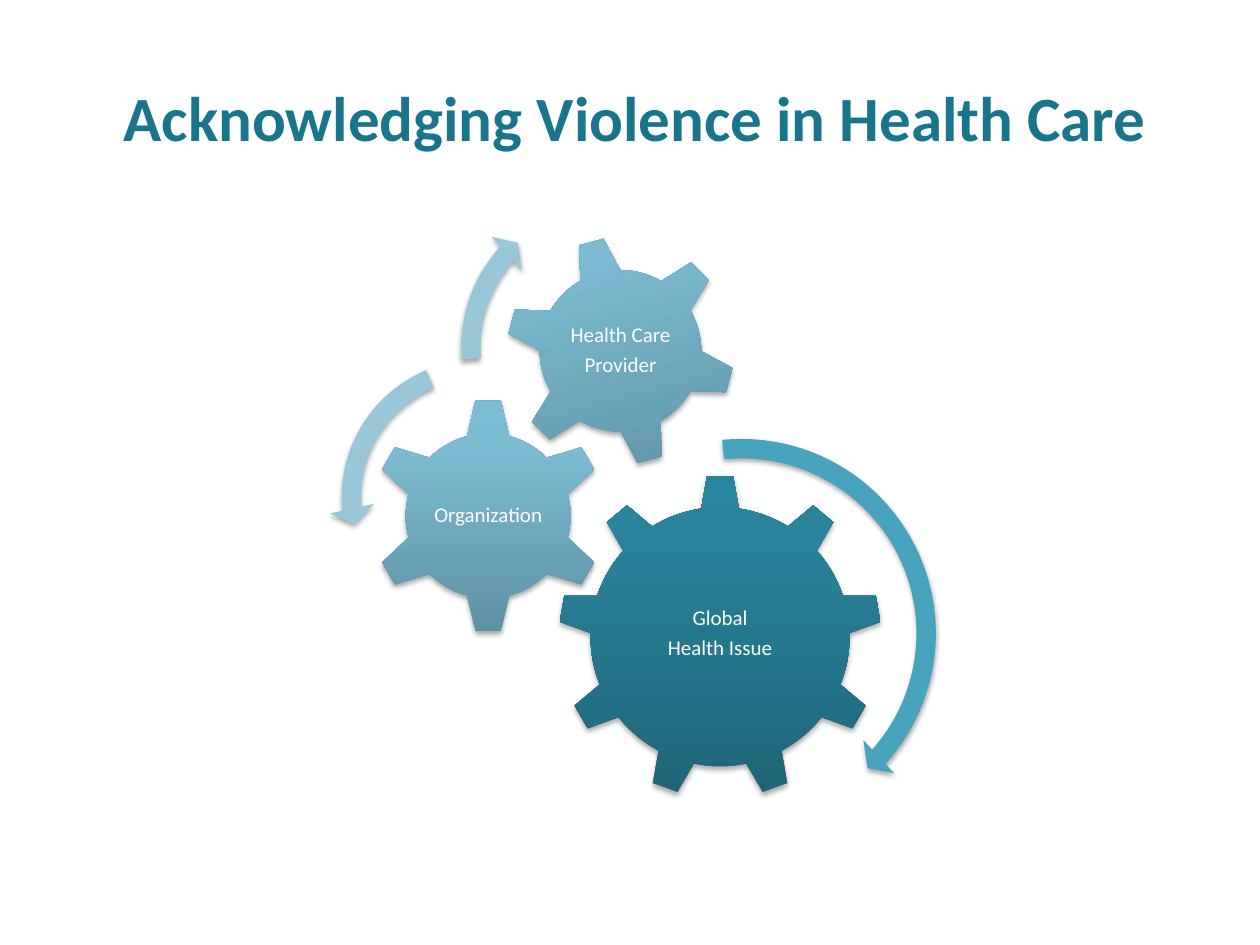
from copy import deepcopy

from lxml import etree
from pptx import Presentation
from pptx.dml.color import RGBColor
from pptx.enum.shapes import MSO_SHAPE
from pptx.enum.text import MSO_ANCHOR, PP_ALIGN
from pptx.oxml.ns import qn
from pptx.util import Pt

GEAR6, GEAR9 = MSO_SHAPE.GEAR_6, MSO_SHAPE.GEAR_9
RIGHT, LEFT = MSO_SHAPE.CIRCULAR_ARROW, MSO_SHAPE.LEFT_CIRCULAR_ARROW
MIDDLE, CENTER = MSO_ANCHOR.MIDDLE, PP_ALIGN.CENTER

HUES = {
    "title": "19758B",
    "text": "FFFFFF",
    "teal": "48A4BD",
    "pale": "9AC7D7",
    "shadow": "000000",
}
FADES = {
    "dark": ("1F6577", "29839B", "27859E"),
    "light": ("5F91A2", "7CBCD2", "7BBDD5"),
}
STOPS = (0, 0.8, 1)


def write(frame, text, size, hue, bold=False, inset=None, line=None, after=None):
    frame.word_wrap = True
    frame.vertical_anchor = MIDDLE
    if inset is not None:
        frame.margin_left = frame.margin_right = Pt(inset)
        frame.margin_top = frame.margin_bottom = Pt(inset)
    frame.text = text
    for para in frame.paragraphs:
        para.alignment = CENTER
        para.line_spacing = line
        para.space_after = None if after is None else Pt(after)
        for run in para.runs:
            font = run.font
            font.name, font.size, font.bold = "Calibri", Pt(size), bold
            font.color.rgb = RGBColor.from_string(HUES[hue])


class Deck:
    def __init__(self):
        self.prs = Presentation()
        self.prs.slide_width, self.prs.slide_height = Pt(720), Pt(540)
        self.slide = self.prs.slides.add_slide(self.prs.slide_layouts[5])
        self.group = self.slide.shapes.add_group_shape()

    def title(self, text, x, y, w, h):
        shape = self.slide.shapes.title
        shape.left, shape.top, shape.width, shape.height = map(Pt, (x, y, w, h))
        write(shape.text_frame, text, 36, "title", bold=True)

    def shade(self, shape):
        shape.shadow.inherit = False
        effects = shape._element.spPr.find(qn("a:effectLst"))
        outer = etree.SubElement(
            effects, qn("a:outerShdw"), blurRad=str(Pt(3.1)), dist=str(Pt(1.8)),
            dir="5400000", rotWithShape="0")
        color = etree.SubElement(outer, qn("a:srgbClr"), val=HUES["shadow"])
        etree.SubElement(color, qn("a:alpha"), val="35000")

    def shape(self, kind, x, y, size):
        shape = self.group.shapes.add_shape(kind, Pt(x), Pt(y), Pt(size), Pt(size))
        shape.line.fill.background()
        self.shade(shape)
        return shape

    def gear(self, kind, x, y, size, fade, turn=0):
        shape = self.shape(kind, x, y, size)
        shape.rotation = turn
        shape.fill.gradient()
        shape.fill.gradient_angle = 90
        stops = shape._element.spPr.find(qn("a:gradFill")).find(qn("a:gsLst"))
        stops.append(deepcopy(stops[-1]))
        for stop, place, hue in zip(shape.fill.gradient_stops, STOPS, FADES[fade]):
            stop.position = place
            stop.color.rgb = RGBColor.from_string(hue)

    def label(self, text, x, y, w, h):
        box = self.group.shapes.add_textbox(Pt(x), Pt(y), Pt(w), Pt(h))
        write(box.text_frame, text, 12, "text", inset=1.2, line=0.9, after=4)

    def arrow(self, kind, x, y, size, hue, band, tip, end, start, head):
        shape = self.shape(kind, x, y, size)
        shape.fill.solid()
        shape.fill.fore_color.rgb = RGBColor.from_string(HUES[hue])
        angles = [angle * 0.6 for angle in (tip, end, start)]
        for i, value in enumerate([band / 100, *angles, head / 100]):
            shape.adjustments[i] = value


def main():
    deck = Deck()
    deck.title("Acknowledging Violence in Health Care", 41.8, 21.6, 642.2, 90)

    deck.gear(GEAR9, 319, 271.4, 185, "dark")
    deck.label("Global\nHealth Issue", 356.4, 314.6, 110.2, 95)
    deck.gear(GEAR6, 211.7, 227.5, 134.6, "light")
    deck.label("Organization", 245.5, 261.4, 67, 66.2)
    deck.gear(GEAR6, 288.7, 134.6, 131.8, "light", turn=345)
    deck.label("Health Care\nProvider", 317.5, 163.4, 74.2, 74.2)

    deck.arrow(RIGHT, 305.3, 243.4, 236.9, "teal", 4.69, 4.98, 41.97, 264.29, 5.47)
    deck.arrow(LEFT, 187.9, 198, 172.1, "pale", 6.45, 7.17, 174.82, 247.3, 7.53)
    deck.arrow(RIGHT, 256.3, 105.8, 185, "pale", 5.98, 6.57, 221.9, 175.14, 6.98)

    deck.prs.save("out.pptx")


if __name__ == "__main__":
    main()
